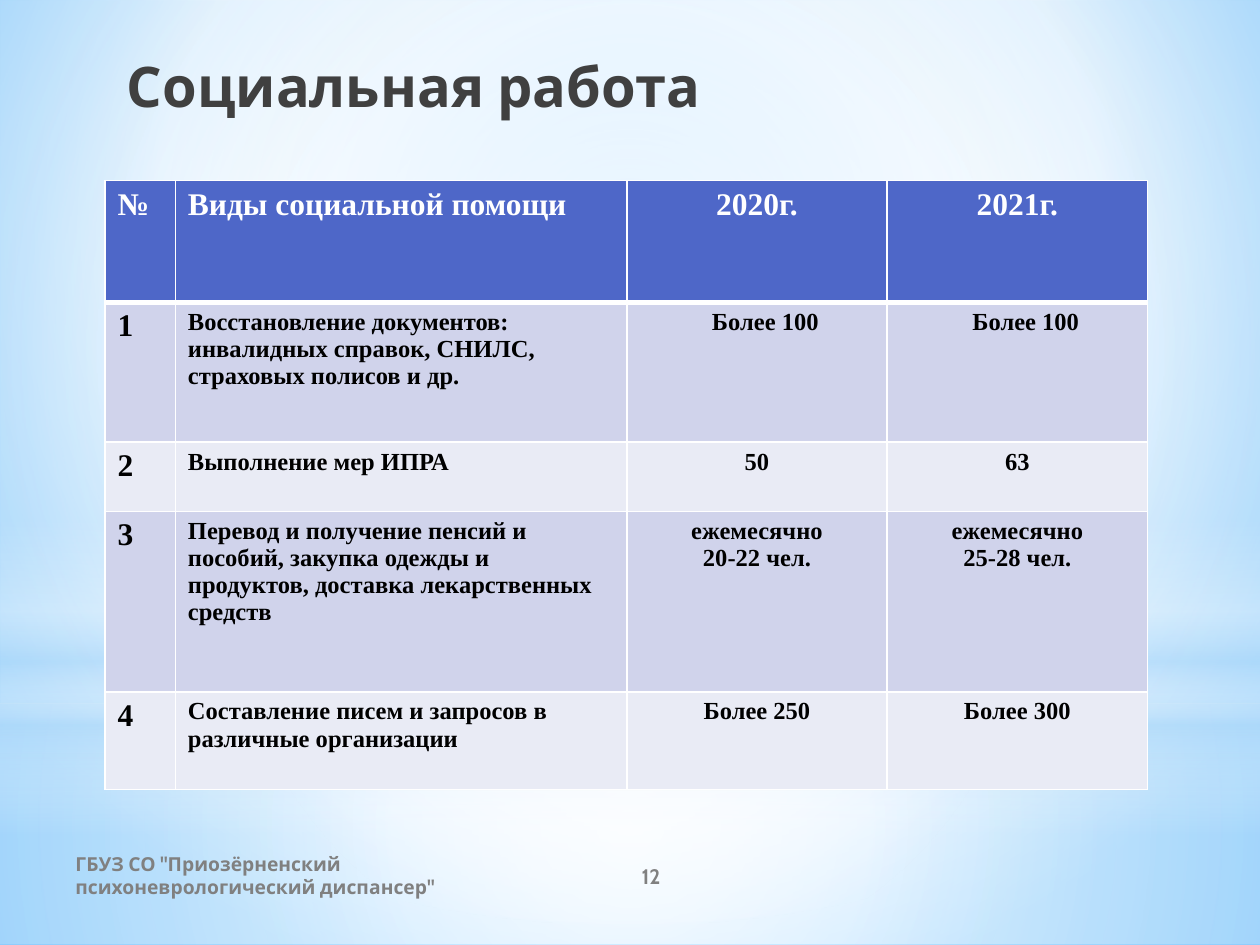
from dataclasses import dataclass

from lxml.etree import SubElement
from pptx import Presentation
from pptx.dml.color import RGBColor
from pptx.enum.shapes import MSO_SHAPE
from pptx.enum.text import MSO_ANCHOR, PP_ALIGN
from pptx.oxml.ns import qn
from pptx.util import Inches, Pt


@dataclass(frozen=True)
class Theme:
    sans: str = "Cabin"
    serif: str = "Times New Roman"
    white: str = "FFFFFF"
    black: str = "000000"
    sky: str = "B4DCFA"
    title: str = "404040"
    muted: str = "808080"
    head: str = "4E67C8"
    odd: str = "D0D3EB"
    even: str = "E9EBF5"
    big: int = 32
    mid: int = 18
    body: int = 14
    page: int = 12
    foot: int = 11


T = Theme()
GRID = 12  # grid units per inch: the slide has 120 columns and 90 rows
MID = (50, 50, 50, 50)

COLS = (6.7, 43, 24.8, 24.8)
ROWS = (11.6, 13.3, 6.6, 17.2, 9.3)
DATA = (
    ("№", "Виды социальной помощи", "2020г.", "2021г."),
    ("1", "Восстановление документов: инвалидных справок, СНИЛС, "
     "страховых полисов и др.", "Более 100", "Более 100"),
    ("2", "Выполнение мер ИПРА", "50", "63"),
    ("3", "Перевод и получение пенсий и пособий, закупка одежды и "
     "продуктов, доставка лекарственных средств",
     "ежемесячно\n20-22 чел.", "ежемесячно\n25-28 чел."),
    ("4", "Составление писем и запросов в различные организации",
     "Более 250", "Более 300"),
)


def unit(n):
    return Inches(n / GRID)


def place(*box):
    return [unit(n) for n in box]


def blend(fill, root, stops, focus=None):
    """Fill with (position, colour, opacity) stops, round a focus or downward."""
    fill.gradient()
    grad = next(root.iter(qn("a:gradFill")))
    grad.clear()
    grad.set("rotWithShape", "1")
    group = SubElement(grad, qn("a:gsLst"))
    for pos, color, alpha in stops:
        stop = SubElement(group, qn("a:gs"), pos=str(pos * 1000))
        tint = SubElement(stop, qn("a:srgbClr"), val=color)
        if alpha < 100:
            SubElement(tint, qn("a:alpha"), val=str(alpha * 1000))
    if focus:
        way = SubElement(grad, qn("a:path"), path="circle")
        sides = {k: str(v * 1000) for k, v in zip("ltrb", focus)}
        SubElement(way, qn("a:fillToRect"), **sides)
    else:
        SubElement(grad, qn("a:lin"), ang="5400000", scaled="0")


def glow(slide, kind, box, stops, focus=None):
    shape = slide.shapes.add_shape(kind, *place(*box))
    shape.shadow.inherit = False
    shape.line.fill.background()
    blend(shape.fill, shape._element.spPr, stops, focus)


def sky(slide):
    blend(slide.background.fill, slide._element,
          ((0, "9ED5FF", 100), (60, T.white, 100), (100, "5BB9FF", 100)),
          (20, 10, 20, 60))
    rect = MSO_SHAPE.RECTANGLE
    glow(slide, rect, (0, 67, 120, 23),
         ((0, T.white, 91), (37, T.white, 76), (100, T.sky, 79)), MID)
    glow(slide, rect, (0, 0, 120, 67),
         ((0, T.white, 89), (48, T.white, 62), (100, T.sky, 79)), MID)
    glow(slide, rect, (0, 49.5, 120, 30),
         ((0, T.white, 0), (29, T.white, 30), (45, T.sky, 40),
          (55, T.white, 26), (65, T.sky, 60), (100, T.white, 0)))
    glow(slide, MSO_SHAPE.OVAL, (0, 21, 120, 67),
         ((0, T.white, 100), (56, T.white, 0)), MID)


def write(frame, text, face, size, color, align=PP_ALIGN.LEFT):
    frame.text = text
    frame.word_wrap = True
    for para in frame.paragraphs:
        para.alignment = align
        font = para.font
        font.name, font.size, font.bold = face, Pt(size), True
        font.color.rgb = RGBColor.from_string(color)


def label(slide, box, text, size, color, align=PP_ALIGN.LEFT,
          anchor=MSO_ANCHOR.MIDDLE):
    frame = slide.shapes.add_textbox(*place(*box)).text_frame
    frame.vertical_anchor = anchor
    write(frame, text, T.sans, size, color, align)


def edge(cell, head):
    """Draw white borders, with a thick one below the head row."""
    props = cell._tc.get_or_add_tcPr()
    for side in "LRTB":
        width = 3 if head and side == "B" else 1
        line = SubElement(props, qn(f"a:ln{side}"), w=str(Pt(width)))
        fill = SubElement(line, qn("a:solidFill"))
        SubElement(fill, qn("a:srgbClr"), val=T.white)


def style(cell, text, row, col):
    head = row == 0
    edge(cell, head)
    cell.fill.solid()
    back = T.head if head else T.odd if row % 2 else T.even
    cell.fill.fore_color.rgb = RGBColor.from_string(back)
    write(cell.text_frame, text, T.serif,
          T.mid if head or col == 0 else T.body,
          T.white if head else T.black,
          PP_ALIGN.CENTER if col > 1 else PP_ALIGN.LEFT)
    if row == 1 and col > 1:
        cell.margin_left = unit(2.8)


def grid(slide):
    box = place(10, 17.2, sum(COLS), sum(ROWS))
    table = slide.shapes.add_table(len(ROWS), len(COLS), *box).table
    for col, width in zip(table.columns, COLS):
        col.width = unit(width)
    for row, height in zip(table.rows, ROWS):
        row.height = unit(height)
    for r, line in enumerate(DATA):
        for c, text in enumerate(line):
            style(table.cell(r, c), text, r, c)


def main():
    deck = Presentation()
    deck.slide_width, deck.slide_height = place(120, 90)
    slide = deck.slides.add_slide(deck.slide_layouts[6])
    sky(slide)
    label(slide, (6, 81, 44, 4.8),
          'ГБУЗ СО "Приозёрненский психоневрологический диспансер"',
          T.foot, T.muted)
    label(slide, (50, 81, 24, 4.8), "12", T.page, T.muted, PP_ALIGN.CENTER)
    label(slide, (10.9, 4.3, 95.4, 11.3), "Социальная работа",
          T.big, T.title, anchor=MSO_ANCHOR.TOP)
    grid(slide)
    deck.save("out.pptx")


if __name__ == "__main__":
    main()
